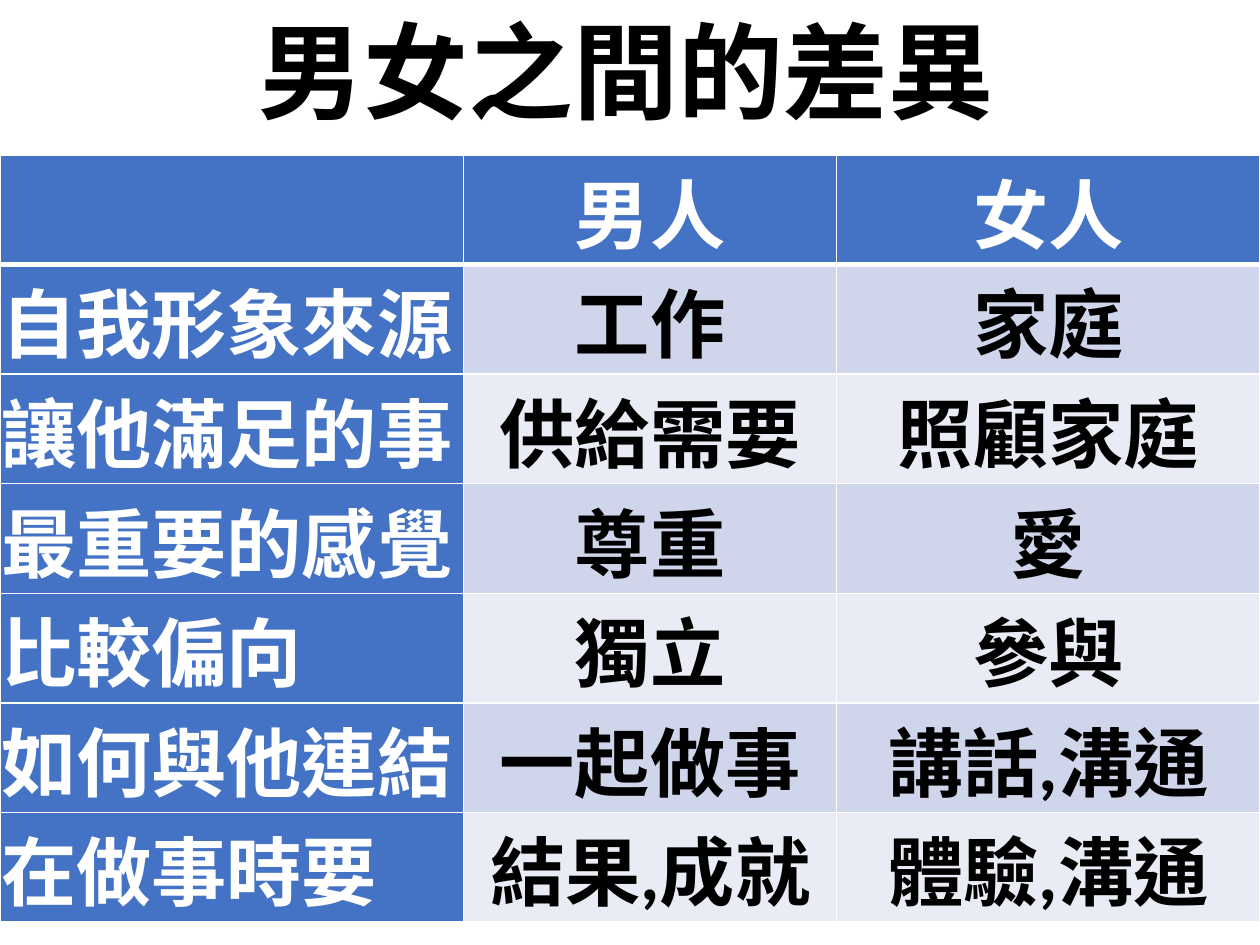
from lxml import etree
from pptx import Presentation
from pptx.dml.color import RGBColor
from pptx.enum import lang, text
from pptx.oxml import ns
from pptx import util as u

HEADING = "男女之間的差異"
COMPARISON = [
    ("", "男人", "女人"),
    ("自我形象來源", "工作", "家庭"),
    ("讓他滿足的事", "供給需要", "照顧家庭"),
    ("最重要的感覺", "尊重", "愛"),
    ("比較偏向", "獨立", "參與"),
    ("如何與他連結", "一起做事", "講話,溝通"),
    ("在做事時要", "結果,成就", "體驗,溝通"),
]
COLUMN_SHARES = (0.368, 0.296, 0.336)
ROW_HEIGHT = u.Inches(0.87)
WHITE = RGBColor(0xFF, 0xFF, 0xFF)
BLACK = RGBColor(0, 0, 0)
BLUE = RGBColor(0x44, 0x72, 0xC4)
BANDS = (RGBColor(0xE9, 0xEB, 0xF5), RGBColor(0xCF, 0xD5, 0xEA))


def write(paragraph, words, size, color, align):
    paragraph.alignment = align
    run = paragraph.add_run()
    run.text = words
    font = run.font
    font.name, font.size, font.bold = "Calibri", u.Pt(size), True
    font.color.rgb = color
    font.language_id = lang.MSO_LANGUAGE_ID.TRADITIONAL_CHINESE


def outline(cell, bottom, top):
    properties = cell._tc.get_or_add_tcPr()
    for side, width in (("L", 1), ("R", 1), ("T", top), ("B", bottom)):
        line = etree.SubElement(properties, ns.qn(f"a:ln{side}"), w=str(u.Pt(width)))
        solid = etree.SubElement(line, ns.qn("a:solidFill"))
        etree.SubElement(solid, ns.qn("a:srgbClr"), val=str(WHITE))


def add_heading(slide, width):
    heading = slide.shapes.title
    heading.left, heading.top = int(width * 0.192), 0
    heading.width, heading.height = int(width * 0.609), u.Inches(1.11)
    frame = heading.text_frame
    frame.word_wrap = False
    frame.auto_size = text.MSO_AUTO_SIZE.SHAPE_TO_FIT_TEXT
    frame.vertical_anchor = text.MSO_ANCHOR.TOP
    write(frame.paragraphs[0], HEADING, 60, BLACK, text.PP_ALIGN.CENTER)


def add_comparison(slide, width):
    rows, columns = len(COMPARISON), len(COLUMN_SHARES)
    table = slide.shapes.add_table(
        rows, columns, 0, u.Inches(1.23), width, ROW_HEIGHT * rows).table
    table.first_col = True
    for column, share in zip(table.columns, COLUMN_SHARES):
        column.width = int(width * share)
    for r, entries in enumerate(COMPARISON):
        for c, words in enumerate(entries):
            cell = table.cell(r, c)
            is_label = r == 0 or c == 0
            outline(cell, bottom=3 if r == 0 else 1, top=3 if r == 1 else 1)
            cell.fill.solid()
            cell.fill.fore_color.rgb = BLUE if is_label else BANDS[r % 2]
            cell.vertical_anchor = text.MSO_ANCHOR.MIDDLE
            cell.margin_left = cell.margin_right = cell.margin_top = u.Inches(0.01)
            cell.margin_bottom = 0
            if words:
                align = text.PP_ALIGN.CENTER if c else text.PP_ALIGN.LEFT
                write(cell.text_frame.paragraphs[0], words, 43,
                      WHITE if is_label else BLACK, align)


def main():
    deck = Presentation()
    deck.slide_width, deck.slide_height = u.Inches(10), u.Inches(7.5)
    slide = deck.slides.add_slide(deck.slide_layouts[5])
    add_comparison(slide, deck.slide_width)
    add_heading(slide, deck.slide_width)
    deck.save("out.pptx")


if __name__ == "__main__":
    main()
